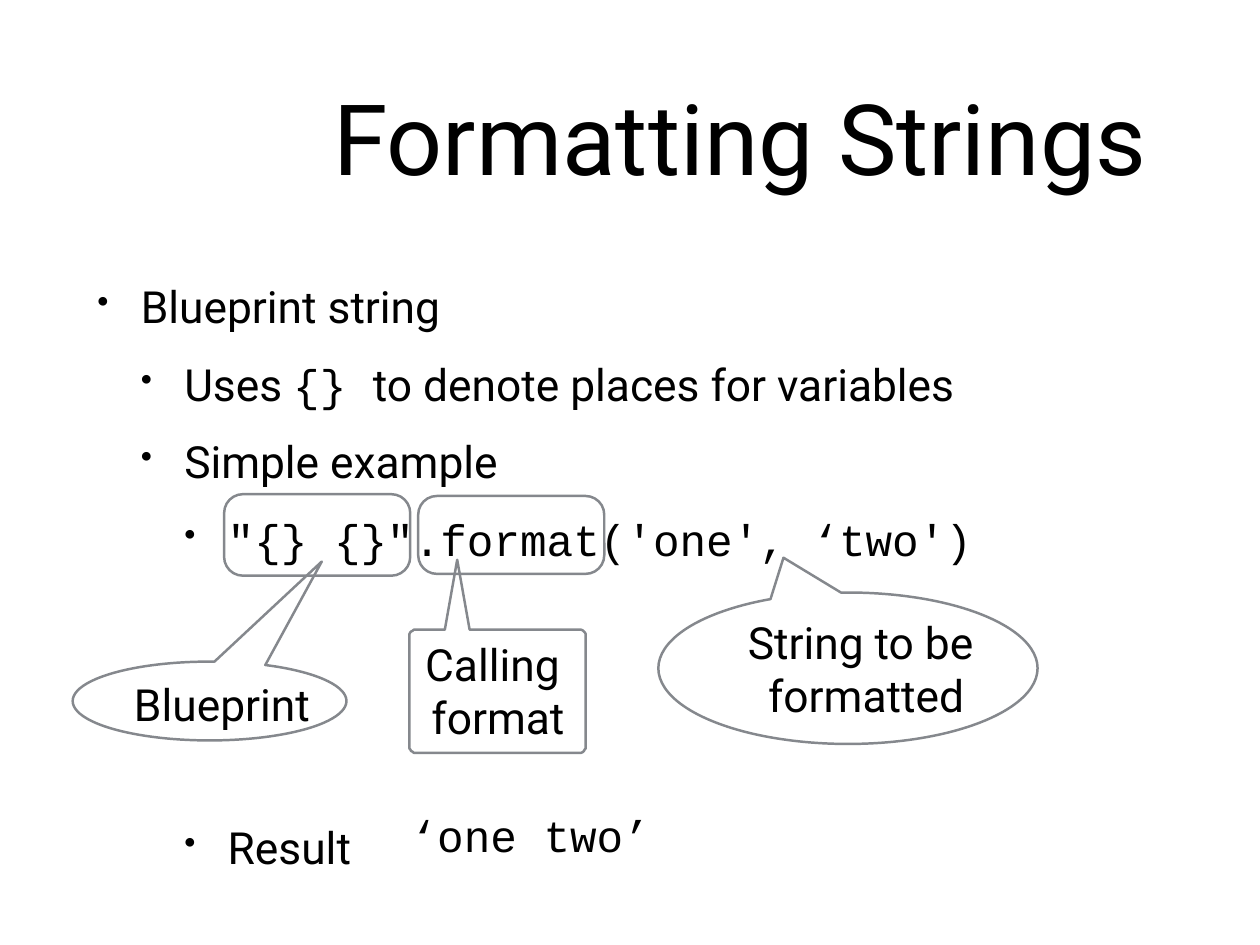
from math import cos, pi, sin

from lxml import etree
from pptx import Presentation, util as u
from pptx.dml.color import RGBColor
from pptx.enum import shapes as s, text as t
from pptx.oxml.ns import qn

PX = 9144  # EMU; 100 px to the inch
COLORS = {"text": "000000", "line": "85888D"}
SANS, MONO = "Roboto", "Courier New"
INDENT = 49

# level, space before in points, runs as (words, font)
BULLETS = [
    (0, 20, [("Blueprint string", SANS)]),
    (1, 20, [("Uses ", SANS), ("{} ", MONO),
             ("to denote places for variables", SANS)]),
    (1, 20, [("Simple example", SANS)]),
    (2, 20, [("\"{} {}\".format('one', ‘two')", MONO)]),
    (2, 207, [("Result", SANS)]),
]


def px(*sizes):
    return [u.Emu(size * PX) for size in sizes]


def color(name):
    return RGBColor.from_string(COLORS[name])


def add_box(slide, box, anchor, wrap):
    frame = slide.shapes.add_textbox(*px(*box)).text_frame
    frame.word_wrap = wrap
    frame.vertical_anchor = anchor
    frame.margin_left = frame.margin_right = px(6)[0]
    frame.margin_top = frame.margin_bottom = px(6)[0]
    return frame


def set_font(para, size, face):
    para.font.size = u.Pt(size)
    para.font.name = face
    para.font.color.rgb = color("text")


def add_label(slide, box, lines, size=36, face=SANS, wrap=False):
    frame = add_box(slide, box, t.MSO_ANCHOR.MIDDLE, wrap)
    for i, line in enumerate(lines):
        para = frame.paragraphs[0] if i == 0 else frame.add_paragraph()
        para.text = line
        para.alignment = t.PP_ALIGN.CENTER
        set_font(para, size, face)


def set_bullet(para, level):
    props = para._p.get_or_add_pPr()
    props.set("marL", str((level + 1) * INDENT * PX))
    props.set("indent", str(-INDENT * PX))
    etree.SubElement(props, qn("a:buSzPct")).set("val", "75000")
    etree.SubElement(props, qn("a:buChar")).set("char", "•")


def add_list(slide, box, items):
    frame = add_box(slide, box, t.MSO_ANCHOR.TOP, True)
    for i, (level, gap, runs) in enumerate(items):
        para = frame.paragraphs[0] if i == 0 else frame.add_paragraph()
        para.level = level
        para.space_before = u.Pt(gap)
        set_bullet(para, level)
        set_font(para, 36, runs[0][1])
        for words, face in runs:
            run = para.add_run()
            run.text = words
            if len(runs) > 1:
                run.font.name = face


def outline(shape):
    shape.shadow.inherit = False
    shape.fill.background()
    shape.line.color.rgb = color("line")
    shape.line.width = u.Pt(2)


def add_frame(slide, kind, box, *adjust):
    shape = slide.shapes.add_shape(kind, *px(*box))
    for i, value in enumerate(adjust):
        shape.adjustments[i] = value
    outline(shape)


def add_callout(slide, box, tip, base, radius):
    """Draw a rounded box whose top edge rises to tip between the base x's."""
    left, top, width, height = box
    right, bottom = left + width, top + height
    corners = [(left, top, 1, 1), (left, bottom, 1, -1),
               (right, bottom, -1, -1), (right, top, -1, 1)]
    points = [(base[0], top)]
    for i, (x, y, dx, dy) in enumerate(corners):
        for step in range(7):
            turn = pi / 2 * (i + 1 - step / 6)
            # Angles run from the top round by the left
            turn = pi / 2 * (i + 1 + step / 6)
            points.append((x + radius * (dx + cos(turn)),
                           y + radius * (dy - sin(turn))))
    points.append((base[1], top))
    path = slide.shapes.build_freeform(*tip, scale=PX)
    path.add_line_segments(points, close=True)
    outline(path.convert_to_shape())


def main():
    deck = Presentation()
    deck.slide_width, deck.slide_height = px(1422, 1067)
    slide = deck.slides.add_slide(deck.slide_layouts[6])
    kinds = s.MSO_SHAPE

    add_label(slide, (353, 36, 965, 236), ["Formatting Strings"], 80, wrap=True)
    add_list(slide, (104, 309, 1214, 688), BULLETS)

    add_frame(slide, kinds.ROUNDED_RECTANGLE, (253, 558, 210, 92), 0.23)
    add_frame(slide, kinds.ROUNDED_RECTANGLE, (472, 560, 210, 88), 0.24)

    add_frame(slide, kinds.OVAL_CALLOUT, (82, 747, 309, 89), 0.41, -1.77)
    add_label(slide, (144, 759, 213, 71), ["Blueprint"])
    add_callout(slide, (462, 711, 199, 139), (516, 632), (502, 530), 7)
    add_label(slide, (471, 714, 182, 131), ["Calling ", "format"])
    add_frame(slide, kinds.OVAL_CALLOUT, (743, 669, 428, 171), -0.17, -0.73)
    add_label(slide, (835, 689, 285, 131), ["String to be ", "formatted"])

    add_label(slide, (457, 909, 283, 68), ["‘one two’"], face=MONO)
    deck.save("out.pptx")


if __name__ == "__main__":
    main()
